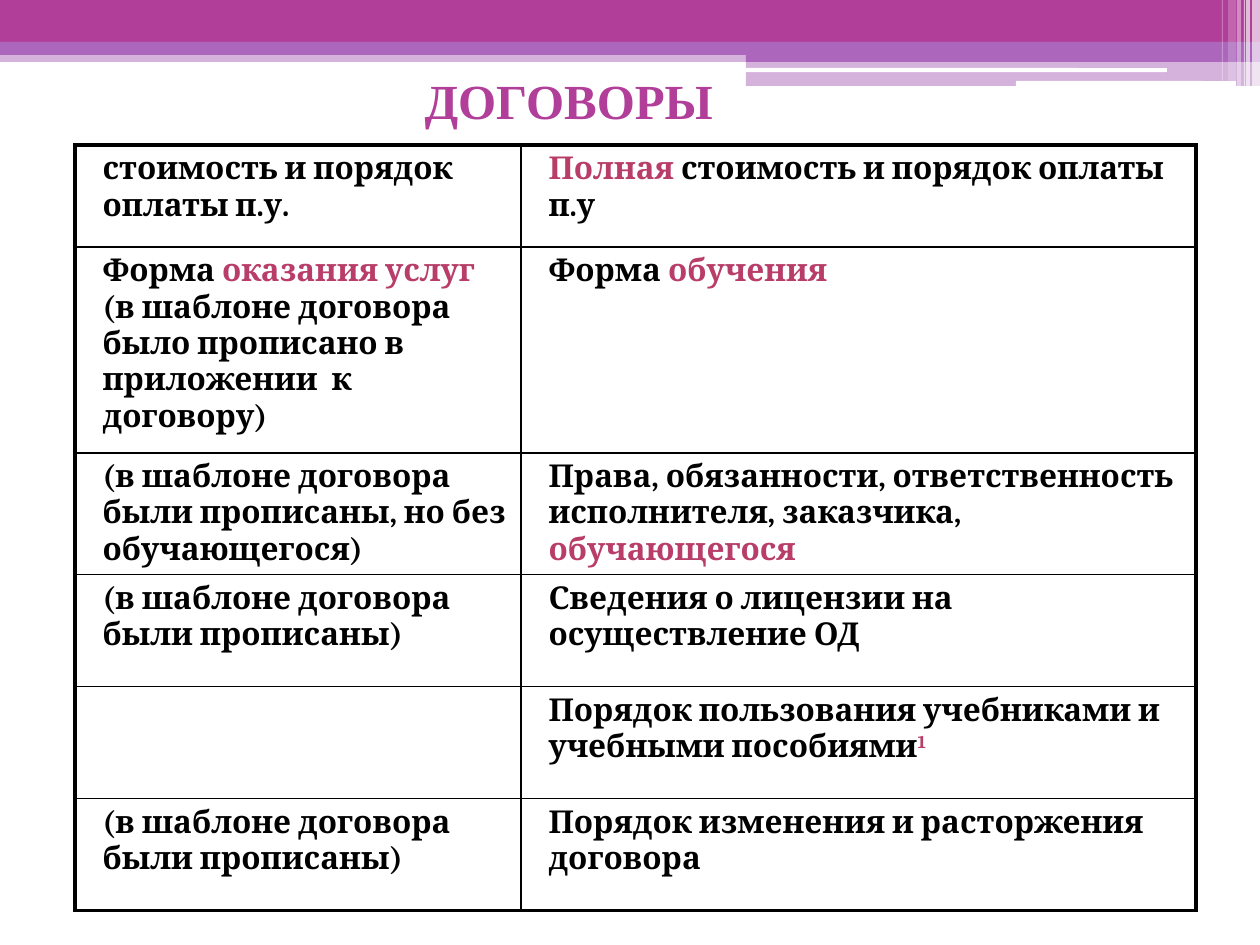
from typing import NamedTuple

from lxml.etree import SubElement
from pptx import Presentation
from pptx.dml.color import RGBColor
from pptx.enum.shapes import MSO_SHAPE as Shape
from pptx.enum.text import MSO_ANCHOR as Anchor, PP_ALIGN as Align
from pptx.oxml import parse_xml
from pptx.oxml.ns import nsdecls, qn
from pptx.util import Emu, Pt

PX = 914400 / 126
MAGENTA, VIOLET, WHITE = "B13F9A", "AC66BB", "FFFFFF"
BLACK, ROSE = "000000", "B83D68"
THIN, THICK = 1, 2.25


class Bar(NamedTuple):
    left: int
    top: int
    width: int
    height: int
    color: str
    opacity: int = 100
    rounded: bool = False


class Part(NamedTuple):
    text: str
    color: str = BLACK
    superscript: bool = False


BARS = [
    Bar(0, 50, 1260, 12, VIOLET, 50),
    Bar(0, 0, 1260, 43, MAGENTA),
    Bar(0, 42, 1260, 13, VIOLET),
    Bar(746, 49, 514, 13, VIOLET),
    Bar(746, 61, 514, 25, VIOLET, 50),
    Bar(745, 68, 422, 4, WHITE, rounded=True),
    Bar(1016, 81, 220, 5, WHITE, rounded=True),
    Bar(1252, 0, 8, 86, WHITE, 65),
    Bar(1246, 0, 4, 86, WHITE, 65),
    Bar(1244, 0, 1, 86, WHITE, 60),
    Bar(1237, 0, 4, 86, WHITE, 40),
    Bar(1228, 0, 8, 81, WHITE, 20),
    Bar(1222, 0, 1, 81, WHITE, 30),
]

TEMPLATE_CLAUSE = [Part("(в шаблоне договора были прописаны)")]
CLAUSES = [
    ([Part("стоимость и порядок оплаты п.у.")],
     [Part("Полная", ROSE), Part(" стоимость и порядок оплаты п.у")]),
    ([Part("Форма "), Part("оказания услуг ", ROSE),
      Part("(в шаблоне договора было прописано в приложении  к договору)")],
     [Part("Форма "), Part("обучения", ROSE)]),
    ([Part("(в шаблоне договора были прописаны, но без обучающегося)")],
     [Part("Права, обязанности, ответственность исполнителя, заказчика, "),
      Part("обучающегося", ROSE)]),
    (TEMPLATE_CLAUSE, [Part("Сведения о лицензии на осуществление ОД")]),
    ([], [Part("Порядок пользования учебниками и учебными пособиями"),
          Part("1", ROSE, superscript=True)]),
    (TEMPLATE_CLAUSE, [Part("Порядок изменения и расторжения договора")]),
]
COLUMN_WIDTHS = [446, 675]
ROW_HEIGHTS = [102, 206, 112, 112, 112, 112]


def px(length: int) -> Emu:
    return Emu(round(length * PX))


def rgb(color: str) -> RGBColor:
    return RGBColor.from_string(color)


def draw_bar(slide, bar: Bar) -> None:
    kind = Shape.ROUNDED_RECTANGLE if bar.rounded else Shape.RECTANGLE
    shape = slide.shapes.add_shape(
        kind, px(bar.left), px(bar.top), px(bar.width), px(bar.height))
    shape.shadow.inherit = False
    shape.line.fill.background()
    shape.fill.solid()
    shape.fill.fore_color.rgb = rgb(bar.color)
    if bar.opacity < 100:
        color = shape.fill._xPr.find(qn("a:solidFill"))[0]
        SubElement(color, qn("a:alpha")).set("val", str(bar.opacity * 1000))


def write_title(slide, text: str) -> None:
    title = slide.shapes.title
    title.left, title.top, title.width, title.height = map(px, (412, 35, 635, 129))
    frame = title.text_frame
    frame.text = text
    frame.word_wrap = True
    frame.vertical_anchor = Anchor.MIDDLE
    heading = frame.paragraphs[0]
    heading.alignment = Align.LEFT
    heading.font.name = "Times New Roman"
    heading.font.size = Pt(28)
    heading.font.bold = True
    heading.font.color.rgb = rgb(MAGENTA)


def set_borders(cell, widths: dict[str, float]) -> None:
    properties = cell._tc.get_or_add_tcPr()
    for position, (side, width) in enumerate(widths.items()):
        properties.insert(position, parse_xml(
            f'<a:ln{side} {nsdecls("a")} w="{Pt(width)}"><a:solidFill>'
            f'<a:srgbClr val="{BLACK}"/></a:solidFill></a:ln{side}>'))


def write_cell(cell, parts: list[Part]) -> None:
    cell.fill.background()
    paragraph = cell.text_frame.paragraphs[0]
    paragraph.space_before = Pt(3)
    paragraph.font.name = "Cambria"
    paragraph.font.size = Pt(18)
    paragraph.font.bold = True
    properties = paragraph._p.get_or_add_pPr()
    properties.set("marL", str(px(15)))
    properties.set("indent", "0")
    for part in parts:
        run = paragraph.add_run()
        run.text = part.text
        run.font.color.rgb = rgb(part.color)
        if part.superscript:
            run._r.get_or_add_rPr().set("baseline", "30000")


def draw_clauses(slide) -> None:
    table = slide.shapes.add_table(
        len(CLAUSES), len(COLUMN_WIDTHS), px(75), px(145),
        px(sum(COLUMN_WIDTHS)), px(sum(ROW_HEIGHTS))).table
    table.first_row = table.horz_banding = False
    for column, width in zip(table.columns, COLUMN_WIDTHS):
        column.width = px(width)
    for row, height in zip(table.rows, ROW_HEIGHTS):
        row.height = px(height)
    last_row, last_column = len(CLAUSES) - 1, len(COLUMN_WIDTHS) - 1
    for row, clause in enumerate(CLAUSES):
        for column, parts in enumerate(clause):
            cell = table.cell(row, column)
            write_cell(cell, parts)
            set_borders(cell, {
                "L": THICK if column == 0 else THIN,
                "R": THICK if column == last_column else THIN,
                "T": THICK if row == 0 else THIN,
                "B": THICK if row == last_row else THIN,
            })


def main() -> None:
    deck = Presentation()
    deck.slide_width, deck.slide_height = px(1260), px(945)
    slide = deck.slides.add_slide(deck.slide_layouts[5])
    for bar in BARS:
        draw_bar(slide, bar)
    write_title(slide, "ДОГОВОРЫ")
    draw_clauses(slide)
    deck.save("out.pptx")


if __name__ == "__main__":
    main()
